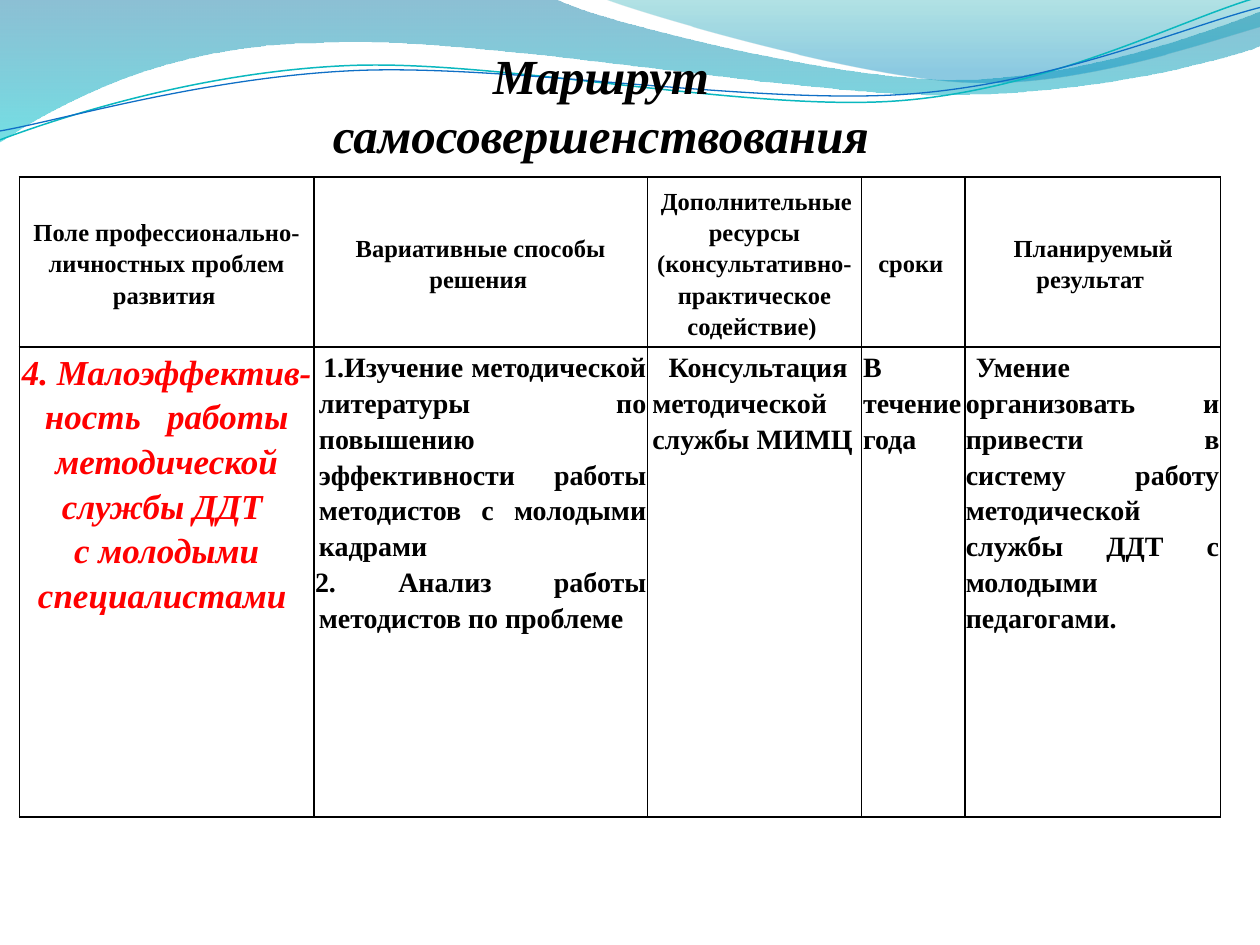
"""Build the self-improvement route slide: wave header, title and plan table."""
from dataclasses import dataclass
from math import cos, radians, sin

from lxml import etree
from pptx import Presentation
from pptx.dml.color import RGBColor
from pptx.enum.text import MSO_ANCHOR, MSO_AUTO_SIZE, PP_ALIGN
from pptx.oxml.ns import qn
from pptx.util import Cm, Pt

CENTER, JUSTIFY = PP_ALIGN.CENTER, PP_ALIGN.JUSTIFY
TOP, MIDDLE = MSO_ANCHOR.TOP, MSO_ANCHOR.MIDDLE
FIT_SHAPE = MSO_AUTO_SIZE.SHAPE_TO_FIT_TEXT
FONT = "Times New Roman"
WIDE_GAP = "|"
INCH = 2.54
LINE_TILT = -2.7
COLORS = {
    "text": "000000", "accent": "FF0000",
    "deep": "0074A1", "aqua": "00C6CF", "teal": "00A1A9", "sky": "008BBF",
    "cyan line": "0AB8BF", "blue line": "0F6FC6",
}


@dataclass(frozen=True)
class Stop:
    position: float
    color: str
    opacity: int


@dataclass(frozen=True)
class Wave:
    start: tuple
    segments: tuple
    stops: tuple = ()
    line: str = ""
    width: float = 0
    center: tuple = (0, 0)
    tilt: float = 0


@dataclass(frozen=True)
class Entry:
    paragraphs: tuple
    size: int = 16
    color: str = "text"
    italic: bool = False
    align: PP_ALIGN = JUSTIFY
    anchor: MSO_ANCHOR = TOP
    margin: float = 0
    indent: float = 0
    gap: float = 4
    tail: int = 0


WAVES = (
    Wave((0, -0.01), (
        ((4.4, -0.01),),
        ((4.76, 0.17), (6.64, 0.63), (7.58, 0.63)),
        ((8.53, 0.63), (9.58, 0.26), (10, 0.09)),
        ((10.01, 0.36),),
        ((9.83, 0.44), (8.7, 0.76), (7.46, 0.75)),
        ((6.22, 0.75), (3.82, 0.28), (2.57, 0.34)),
        ((1.29, 0.35), (0.46, 0.83), (-0.01, 1.13)),
        ((0, -0.01),),
    ), stops=(Stop(0, "deep", 45), Stop(1, "aqua", 55))),
    Wave((4.79, -0.01), (
        ((5.09, 0.11), (6.82, 0.62), (7.69, 0.65)),
        ((8.56, 0.69), (9.61, 0.32), (10, 0.21)),
        ((10, 0),),
        ((4.79, -0.01),),
    ), stops=(Stop(0, "teal", 30), Stop(0.8, "sky", 45))),
    Wave((0, 1.11), (
        ((0.48, 0.93), (1.58, 0.57), (2.77, 0.52)),
        ((3.95, 0.47), (5.93, 0.89), (7.13, 0.8)),
        ((8.33, 0.71), (9.38, 0.15), (9.98, -0.02)),
    ), line="cyan line", width=0.85, center=(4.99, 0.58), tilt=LINE_TILT),
    Wave((0, 1.04), (
        ((0.47, 0.96), (1.64, 0.61), (2.83, 0.56)),
        ((4.03, 0.51), (5.97, 0.83), (7.17, 0.75)),
        ((8.36, 0.67), (9.41, 0.21), (10, 0.06)),
    ), line="blue line", width=0.75, center=(5, 0.59), tilt=LINE_TILT),
)

HEADINGS = (
    ("Поле профессионально-личностных проблем развития", 0),
    ("Вариативные способы решения", 0),
    ("Дополнительные ресурсы (консультативно-практическое|содействие)", 0.08),
    ("сроки", 0),
    ("Планируемый результат", 0.03),
)
PLAN = (
    Entry(("4. Малоэффектив-ность|работы методической службы ДДТ ",
           "с молодыми специалистами "),
          size=20, color="accent", italic=True, align=CENTER, gap=10),
    Entry((" 1.Изучение методической литературы по повышению эффективности "
           "работы методистов с молодыми кадрами",
           "2. Анализ работы методистов по проблеме"), margin=0.08, indent=-0.08),
    Entry(("Консультация методической службы МИМЦ",), margin=0.08, indent=0.33),
    Entry(("В течение года ",), margin=0.01),
    Entry(("Умение организовать и привести|в систему работу методической "
           "службы ДДТ с молодыми педагогами.",), indent=0.2),
)
COLUMN_WIDTHS = (5.94, 6.72, 4.32, 2.08, 5.15)
ROW_HEIGHTS = (3.43, 9.47)


def rgb(name: str) -> RGBColor:
    return RGBColor.from_string(COLORS[name])


def level_point(point: tuple, wave: Wave) -> tuple:
    """Place a point on the slide with the wave's tilt taken out."""
    angle = radians(-wave.tilt)
    center_x, center_y = wave.center
    dx, dy = point[0] - center_x, point[1] - center_y
    return (Cm(INCH * (center_x + dx * cos(angle) - dy * sin(angle))),
            Cm(INCH * (center_y + dx * sin(angle) + dy * cos(angle))))


def bend(shape, wave: Wave) -> None:
    """Join each run of three straight steps into one cubic curve."""
    steps = shape.element.iter(qn("a:lnTo"))
    steps = iter(list(steps))
    for segment in wave.segments:
        group = [next(steps) for _ in segment]
        if len(group) == 3:
            curve = etree.Element(qn("a:cubicBezTo"))
            group[0].addprevious(curve)
            for step in group:
                curve.append(step[0])
                step.getparent().remove(step)


def draw_wave(page, wave: Wave) -> None:
    """Draw one filled or outlined wave behind the title."""
    points = [level_point(point, wave) for segment in wave.segments for point in segment]
    builder = page.shapes.build_freeform(*level_point(wave.start, wave))
    builder.add_line_segments(points, close=bool(wave.stops))
    shape = builder.convert_to_shape()
    bend(shape, wave)
    shape.shadow.inherit = False
    shape.rotation = wave.tilt
    if wave.stops:
        shape.line.fill.background()
        shape.fill.gradient()
        shape.fill.gradient_angle = 270
        for target, stop in zip(shape.fill.gradient_stops, wave.stops):
            target.position = stop.position
            target.color.rgb = rgb(stop.color)
        for color, stop in zip(shape.element.spPr.iter(qn("a:srgbClr")), wave.stops):
            etree.SubElement(color, qn("a:alpha"), val=str(stop.opacity * 1000))
    else:
        shape.fill.background()
        shape.line.color.rgb = rgb(wave.line)
        shape.line.width = Pt(wave.width)
    page.shapes.title.element.addprevious(shape.element)


def write(para, text: str, size: int, color: str, italic: bool, bold: bool = True):
    span = para.add_run()
    span.text = text
    span.font.name, span.font.size = FONT, Pt(size)
    span.font.bold, span.font.italic = bold, italic
    span.font.color.rgb = rgb(color)
    return span


def add_title(page) -> None:
    box = page.shapes.title
    box.left, box.top, box.width, box.height = Cm(4.95), Cm(0.79), Cm(14.33), Cm(2.64)
    frame = box.text_frame
    frame.word_wrap, frame.auto_size, frame.vertical_anchor = True, FIT_SHAPE, TOP
    para = frame.paragraphs[0]
    para.alignment, para.line_spacing = CENTER, 1.0
    write(para, "Маршрут самосовершенствования", 28, "text", True)


def fill_cell(cell, entry: Entry) -> None:
    """Write one table entry and give its cell thin borders."""
    cell.margin_left = cell.margin_right = cell.margin_top = Cm(0.02)
    cell.margin_bottom = 0
    cell.vertical_anchor = entry.anchor
    properties = cell._tc.get_or_add_tcPr()
    for side in "LRTB":
        border = etree.SubElement(properties, qn(f"a:ln{side}"), w=str(Pt(1)))
        solid = etree.SubElement(border, qn("a:solidFill"))
        etree.SubElement(solid, qn("a:srgbClr"), val=COLORS["text"])
    cell.fill.background()
    frame = cell.text_frame
    look = (entry.size, entry.color, entry.italic)
    for index, text in enumerate(entry.paragraphs):
        para = frame.add_paragraph() if index else frame.paragraphs[0]
        para.alignment, para.line_spacing = entry.align, 1.15
        layout = para._p.get_or_add_pPr()
        layout.set("marL", str(Cm(entry.margin)))
        layout.set("indent", str(Cm(entry.indent)))
        for number, part in enumerate(text.split(WIDE_GAP)):
            if number:
                space = write(para, " ", *look)
                space.font._element.set("spc", str(int(entry.gap * 100)))
            write(para, part, *look)
        if entry.tail:
            write(para, " ", entry.tail, entry.color, False, bold=False)


def add_plan(page) -> None:
    frame = page.shapes.add_table(len(ROW_HEIGHTS), len(COLUMN_WIDTHS), Cm(0.39), Cm(3.57),
                                  Cm(sum(COLUMN_WIDTHS)), Cm(sum(ROW_HEIGHTS)))
    table = frame.table
    table.first_row = table.horz_banding = False
    for column, width in zip(table.columns, COLUMN_WIDTHS):
        column.width = Cm(width)
    header = [Entry((text,), size=14, align=CENTER, anchor=MIDDLE, indent=indent, tail=11)
              for text, indent in HEADINGS]
    for row, height, entries in zip(table.rows, ROW_HEIGHTS, (header, PLAN)):
        row.height = Cm(height)
        for cell, entry in zip(row.cells, entries):
            fill_cell(cell, entry)


def main() -> None:
    deck = Presentation()
    deck.slide_width, deck.slide_height = Cm(25.4), Cm(19.05)
    page = deck.slides.add_slide(deck.slide_layouts[5])
    for wave in WAVES:
        draw_wave(page, wave)
    add_title(page)
    add_plan(page)
    deck.save("out.pptx")


if __name__ == "__main__":
    main()
